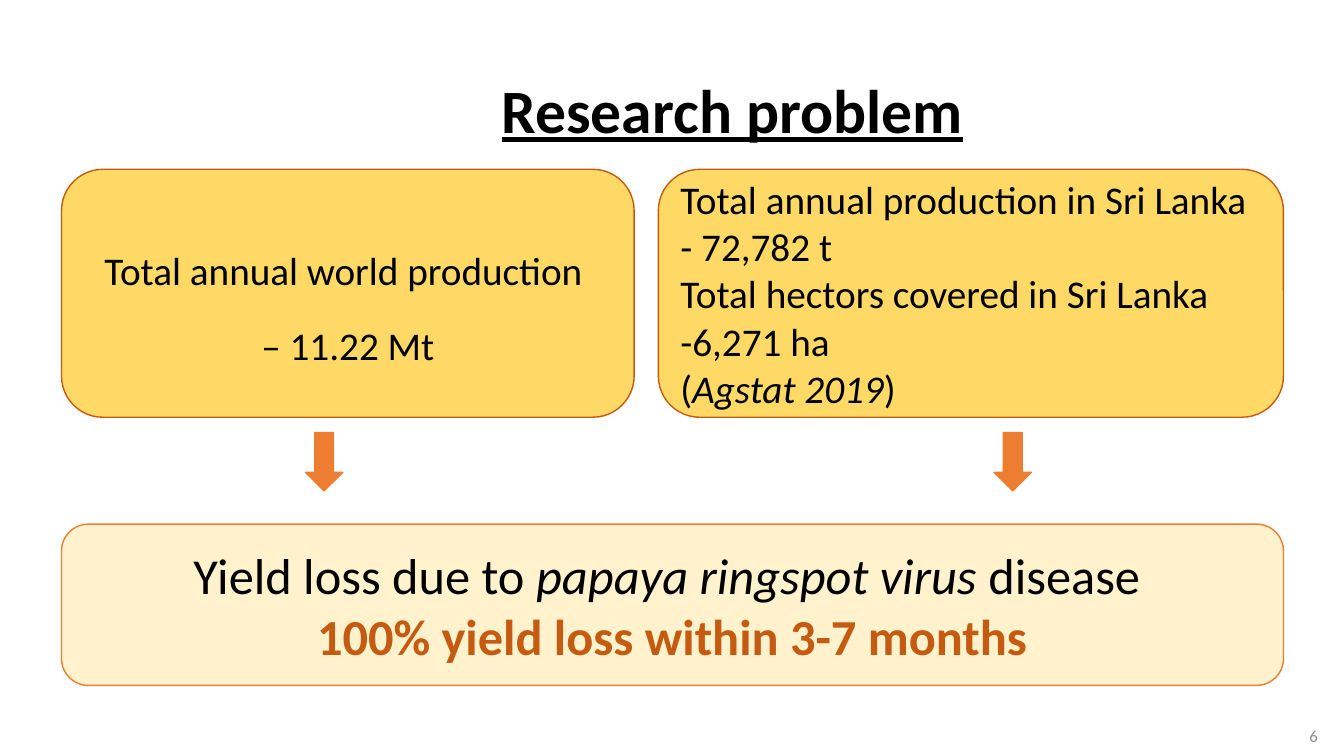
from dataclasses import dataclass
from pptx import Presentation
from pptx.dml.color import RGBColor as RGB
from pptx.enum.shapes import MSO_SHAPE as Shape
from pptx.enum.text import MSO_ANCHOR as Anchor, MSO_AUTO_SIZE as Fit, PP_ALIGN as Align
from pptx.util import Inches, Pt


@dataclass(frozen=True)
class Theme:
    face: str = "Calibri"
    ink: str = "000000"
    gray: str = "8C8C8C"
    gold: str = "FFD966"
    cream: str = "FFF2CC"
    rust: str = "C55A11"
    orange: str = "ED7D31"
    head: int = 44
    loss: int = 36
    body: int = 28
    note: int = 12


THEME = Theme()


def write(shape, lines, size, color=THEME.ink, align=Align.LEFT, space=1.0):
    frame = shape.text_frame
    frame.word_wrap = True
    frame.auto_size = Fit.NONE
    frame.vertical_anchor = Anchor.MIDDLE
    for i, line in enumerate(lines):
        para = frame.add_paragraph() if i else frame.paragraphs[0]
        para.alignment = align
        para.line_spacing = space
        for text, style in line:
            run = para.add_run()
            run.text = text
            look = {"name": THEME.face, "size": Pt(size), "bold": False,
                    "italic": False} | style
            hue = look.pop("hue", color)
            for key, value in look.items():
                setattr(run.font, key, value)
            run.font.color.rgb = RGB.from_string(hue)


def draw(slide, kind, box, fill, edge):
    shape = slide.shapes.add_shape(kind, *map(Inches, box))
    shape.shadow.inherit = False
    shape.fill.solid()
    shape.fill.fore_color.rgb = RGB.from_string(fill)
    shape.line.color.rgb = RGB.from_string(edge)
    shape.line.width = Pt(1)
    return shape


def add_title(slide, box):
    title = slide.shapes.title
    names = ("left", "top", "width", "height")
    for name, value in zip(names, box):
        setattr(title, name, Inches(value))
    write(title, [[("Research problem", {"bold": True, "underline": True})]],
          THEME.head, align=Align.CENTER, space=0.9)


def add_facts(slide, box):
    left, top, width, height = box
    world, gap = 5.68, 0.24
    card = draw(slide, Shape.ROUNDED_RECTANGLE, (left, top, world, height),
                THEME.gold, THEME.rust)
    write(card, [[("Total annual world production ", {})], [("– 11.22 Mt", {})]],
          THEME.body, align=Align.CENTER, space=1.6)
    shift = world + gap
    card = draw(slide, Shape.ROUNDED_RECTANGLE,
                (left + shift, top, width - shift, height), THEME.gold, THEME.rust)
    write(card, [
        [("Total annual production in Sri Lanka - 72,782 t", {})],
        [("Total hectors covered in Sri Lanka", {})],
        [("-6,271 ha", {})],
        [("(", {}), ("Agstat 2019", {"italic": True}), (")", {})],
    ], THEME.body)


def add_loss(slide, box):
    panel = draw(slide, Shape.ROUNDED_RECTANGLE, box, THEME.cream, THEME.orange)
    write(panel, [
        [("Yield loss due to ", {}), ("papaya ringspot virus ", {"italic": True}),
         ("disease ", {})],
        [("100% yield loss within 3-7 months", {"bold": True, "hue": THEME.rust})],
    ], THEME.loss, align=Align.CENTER)


def add_arrows(slide, box):
    left, top, width, height = box
    thick = 0.37
    for x in (left, left + width - thick):
        draw(slide, Shape.DOWN_ARROW, (x, top, thick, height),
             THEME.orange, THEME.orange)


def add_number(slide, box):
    label = slide.shapes.add_textbox(*map(Inches, box))
    write(label, [[("6", {})]], THEME.note, THEME.gray, Align.RIGHT)


def main():
    deck = Presentation()
    deck.slide_width = Inches(13.33)
    deck.slide_height = Inches(7.5)
    slide = deck.slides.add_slide(deck.slide_layouts[5])
    left, width = 0.61, 12.12
    add_title(slide, (2.12, 0.4, 10.29, 1.45))
    add_number(slide, (10.17, 7.1, 3, 0.4))
    add_facts(slide, (left, 1.68, width, 2.46))
    add_loss(slide, (left, 5.2, width, 1.6))
    add_arrows(slide, (3.03, 4.29, 7.2, 0.58))
    deck.save("out.pptx")


if __name__ == "__main__":
    main()
